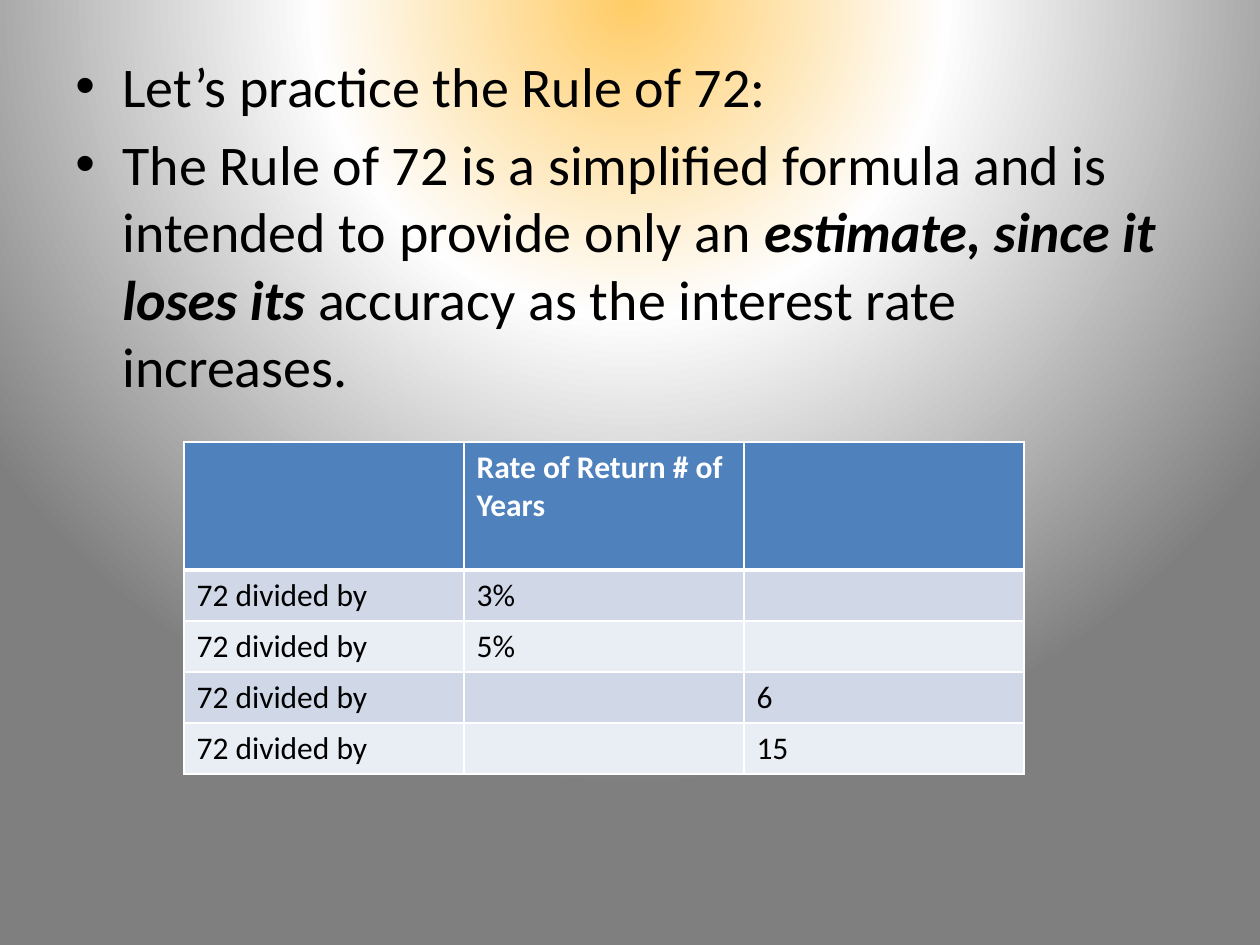
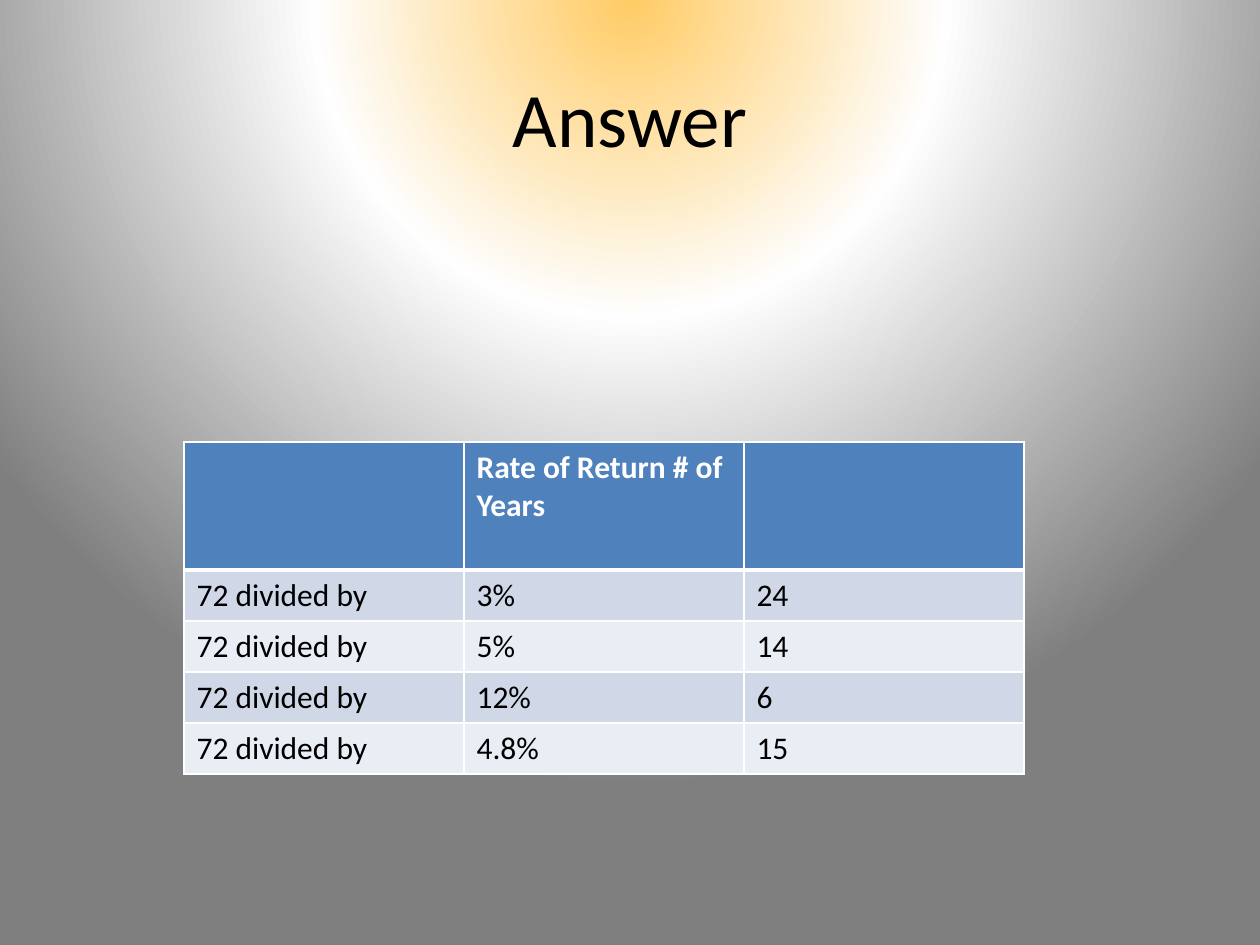
import lxml.etree
import pptx
import pptx.dml.color
import pptx.enum.text
import pptx.oxml
import pptx.oxml.ns
import pptx.util

EMU_PER_PX = 914400 / 126
FONT = "Calibri"
BLACK, WHITE = "000000", "FFFFFF"
HEADER_FILL = "4F81BD"
BAND_FILLS = ("D0D8E8", "E9EDF4")
NAMESPACE = pptx.oxml.ns.nsdecls("a", "p")

BODY_BOX = (63, 45, 1134, 799)
TITLE_BOX = (63, 38, 1134, 158)
TABLE_BOX = (184, 442, 840, 332)
HEADER_HEIGHT = 128

HEADER = ("", "Rate of Return # of Years", "")
DIVIDEND = "72 divided by"
PRACTICE = (("3%", ""), ("5%", ""), ("", "6"), ("", "15"))
ANSWERS = (("3%", "24"), ("5%", "14"), ("12%", "6"), ("4.8%", "15"))

# Each paragraph is a list of (text, emphasised) pieces
BODY = (
    [("Let’s practice the Rule of 72:", False)],
    [("The Rule of 72 is a simplified formula and is intended to provide only an ", False),
     ("estimate, since it loses its ", True),
     ("accuracy as the interest rate increases.", False)],
)


def px(length):
    return pptx.util.Emu(round(length * EMU_PER_PX))


def color(value):
    return pptx.dml.color.RGBColor.from_string(value)


def format_run(run, size, text_color=BLACK, bold=False, italic=False):
    run.font.name = FONT
    run.font.size = pptx.util.Pt(size)
    run.font.color.rgb = color(text_color)
    run.font.bold = bold
    run.font.italic = italic


def set_background(master):
    """Give every slide the same glow from the top edge."""
    slide_data = master.element.cSld
    for old in slide_data.findall(pptx.oxml.ns.qn("p:bg")):
        slide_data.remove(old)
    slide_data.insert(0, pptx.oxml.parse_xml(
        f'<p:bg {NAMESPACE}><p:bgPr><a:gradFill rotWithShape="1"><a:gsLst>'
        '<a:gs pos="0"><a:srgbClr val="FFCC66"><a:alpha val="52000"/></a:srgbClr></a:gs>'
        '<a:gs pos="40000"><a:srgbClr val="FEFEFE"/></a:gs>'
        '<a:gs pos="100000"><a:srgbClr val="7F7F7F"/></a:gs></a:gsLst>'
        '<a:path path="circle"><a:fillToRect l="50000" t="-80000" r="50000" b="180000"/></a:path>'
        '</a:gradFill><a:effectLst/></p:bgPr></p:bg>'))


def add_text_frame(slide, box):
    text_frame = slide.shapes.add_textbox(*map(px, box)).text_frame
    text_frame.word_wrap = True
    return text_frame


def add_title(slide, box, text):
    text_frame = add_text_frame(slide, box)
    text_frame.vertical_anchor = pptx.enum.text.MSO_ANCHOR.MIDDLE
    text_frame.text = text
    paragraph = text_frame.paragraphs[0]
    paragraph.alignment = pptx.enum.text.PP_ALIGN.CENTER
    format_run(paragraph.runs[0], 44)


def add_bullet(paragraph, indent):
    properties = paragraph._p.get_or_add_pPr()
    properties.set("marL", str(px(indent)))
    properties.set("indent", str(px(-indent)))
    for xml in (f'<a:spcBef {NAMESPACE}><a:spcPct val="20000"/></a:spcBef>',
                f'<a:buFont {NAMESPACE} typeface="Arial"/>',
                f'<a:buChar {NAMESPACE} char="•"/>'):
        properties.append(pptx.oxml.parse_xml(xml))


def add_body(slide, box, paragraphs):
    text_frame = add_text_frame(slide, box)
    for index, pieces in enumerate(paragraphs):
        paragraph = text_frame.add_paragraph() if index else text_frame.paragraphs[0]
        add_bullet(paragraph, 47)
        for text, emphasised in pieces:
            run = paragraph.add_run()
            run.text = text
            format_run(run, 32, bold=emphasised, italic=emphasised)


def set_borders(cell, bottom_width):
    properties = cell._tc.get_or_add_tcPr()
    sides = (("lnL", 1), ("lnR", 1), ("lnT", 1), ("lnB", bottom_width))
    for index, (side, width) in enumerate(sides):
        properties.insert(index, pptx.oxml.parse_xml(
            f'<a:{side} {NAMESPACE} w="{pptx.util.Pt(width)}"><a:solidFill>'
            f'<a:srgbClr val="{WHITE}"/></a:solidFill></a:{side}>'))


def add_rule_table(slide, box, results):
    """Header row above one banded row for each rate and number of years."""
    rows = [HEADER] + [(DIVIDEND, *result) for result in results]
    left, top, width, height = box
    table = slide.shapes.add_table(len(rows), len(HEADER), *map(px, box)).table
    table.horz_banding = False
    for column in table.columns:
        column.width = px(width / len(HEADER))

    row_height = (height - HEADER_HEIGHT) / len(results)
    for row_index, texts in enumerate(rows):
        is_header = row_index == 0
        table.rows[row_index].height = px(HEADER_HEIGHT if is_header else row_height)
        fill = HEADER_FILL if is_header else BAND_FILLS[(row_index - 1) % 2]
        for column_index, text in enumerate(texts):
            cell = table.cell(row_index, column_index)
            cell.fill.solid()
            cell.fill.fore_color.rgb = color(fill)
            set_borders(cell, 3 if is_header else 1)
            cell.text_frame.text = text
            for run in cell.text_frame.paragraphs[0].runs:
                format_run(run, 18, WHITE if is_header else BLACK, bold=is_header)


def build_practice_slide(slide):
    add_body(slide, BODY_BOX, BODY)
    add_rule_table(slide, TABLE_BOX, PRACTICE)


def build_answer_slide(slide):
    add_title(slide, TITLE_BOX, "Answer")
    add_rule_table(slide, TABLE_BOX, ANSWERS)


def main():
    presentation = pptx.Presentation()
    presentation.slide_width = px(1260)
    presentation.slide_height = px(945)
    set_background(presentation.slide_master)
    blank_layout = presentation.slide_layouts[6]
    for build_slide in (build_practice_slide, build_answer_slide):
        build_slide(presentation.slides.add_slide(blank_layout))
    presentation.save("out.pptx")


if __name__ == "__main__":
    main()
